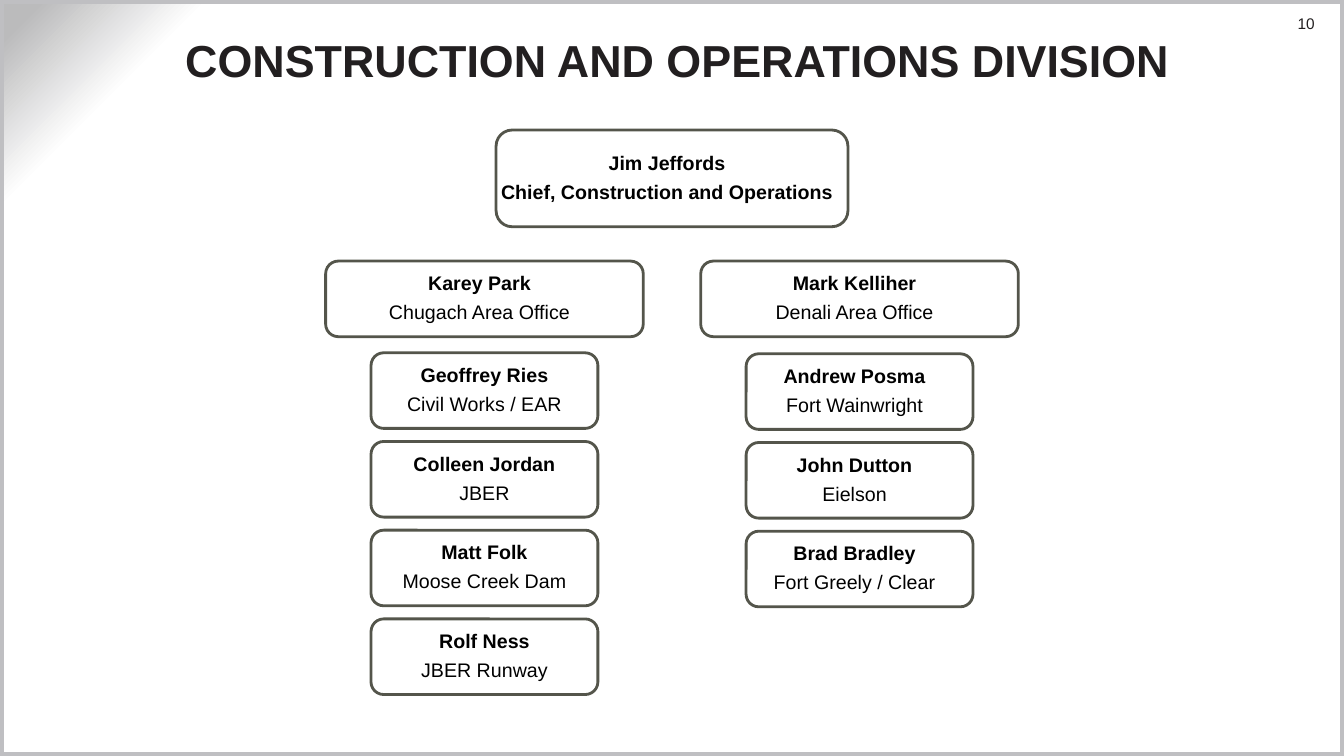
from lxml import etree
from pptx import Presentation
from pptx.dml.color import RGBColor
from pptx.enum.shapes import MSO_SHAPE as Preset
from pptx.enum.text import MSO_ANCHOR as Anchor, PP_ALIGN as Align
from pptx.oxml.ns import qn
from pptx.util import Inches, Pt

WIDTH, HEIGHT = 13.33, 7.5
INK = RGBColor(0x22, 0x1F, 0x20)
BLACK = RGBColor(0, 0, 0)
OLIVE = RGBColor(0x54, 0x55, 0x4B)
FRAME_GREY = RGBColor(0xBF, 0xBF, 0xC2)
WHITE = RGBColor(0xFF, 0xFF, 0xFF)
CORNER_GREY = RGBColor(0xBB, 0xBB, 0xBC)
CORNER_STOPS = [(87, WHITE), (90, WHITE), (98, CORNER_GREY)]

OFFICE_SIZE = (3.15, 0.75)
REPORT_SIZE = (2.25, 0.75)
REPORT_INDENT = 0.45
REPORT_PITCH = 0.88
PADDED = (0, 0.05, 0.1, 0.05)
FLUSH = (0, 0, 0, 0)

CHIEF = ("Jim Jeffords", "Chief, Construction and Operations")
CHUGACH = [
    ("Karey Park", "Chugach Area Office"),
    ("Geoffrey Ries", "Civil Works / EAR"),
    ("Colleen Jordan", "JBER"),
    ("Matt Folk", "Moose Creek Dam"),
    ("Rolf Ness", "JBER Runway"),
]
DENALI = [
    ("Mark Kelliher", "Denali Area Office"),
    ("Andrew Posma", "Fort Wainwright"),
    ("John Dutton", "Eielson"),
    ("Brad Bradley", "Fort Greely / Clear"),
]


def assign(target, values):
    for key, value in values.items():
        setattr(target, key, value)


def set_frame(frame, insets, anchor):
    left, top, right, bottom = map(Inches, insets)
    assign(frame, {
        "word_wrap": True, "vertical_anchor": anchor,
        "margin_left": left, "margin_top": top,
        "margin_right": right, "margin_bottom": bottom,
    })


def write(paragraph, text, size, color, bold, align):
    paragraph.alignment = align
    run = paragraph.add_run()
    run.text = text
    assign(run.font, {"name": "Arial", "size": Pt(size), "bold": bold})
    run.font.color.rgb = color


def outlined(slide, preset, box, color, weight):
    outline = slide.shapes.add_shape(preset, *map(Inches, box))
    outline.shadow.inherit = False
    outline.fill.background()
    outline.line.color.rgb = color
    outline.line.width = Pt(weight)
    return outline


def backdrop(slide):
    slide.background.fill.gradient()
    gradient = slide.element.find(".//" + qn("a:gradFill"))
    for child in list(gradient):
        gradient.remove(child)
    stops = etree.SubElement(gradient, qn("a:gsLst"))
    for position, color in CORNER_STOPS:
        stop = etree.SubElement(stops, qn("a:gs"), pos=str(position * 1000))
        etree.SubElement(stop, qn("a:srgbClr"), val=str(color))
    circle = etree.SubElement(gradient, qn("a:path"), path="circle")
    etree.SubElement(circle, qn("a:fillToRect"), l="100000", t="100000")
    outlined(slide, Preset.RECTANGLE, (0, 0, WIDTH, HEIGHT), FRAME_GREY, 6)


def heading(slide, box, text, size, bold, align, insets, anchor):
    frame = slide.shapes.add_textbox(*map(Inches, box)).text_frame
    set_frame(frame, insets, anchor)
    write(frame.paragraphs[0], text, size, INK, bold, align)


def person_box(slide, box, person, insets=PADDED, bold_role=False):
    card = outlined(slide, Preset.ROUNDED_RECTANGLE, box, OLIVE, 2)
    frame = card.text_frame
    set_frame(frame, insets, Anchor.MIDDLE)
    name, role = person
    lines = [(frame.paragraphs[0], name, True),
             (frame.add_paragraph(), role, bold_role)]
    for paragraph, text, bold in lines:
        assign(paragraph, {"line_spacing": 0.9, "space_after": Pt(5.5)})
        write(paragraph, text, 14, BLACK, bold, Align.CENTER)


def area_column(slide, left, top, first_report, people, insets):
    office, *reports = people
    person_box(slide, (left, top, *OFFICE_SIZE), office)
    for row, report in enumerate(reports):
        report_top = first_report + row * REPORT_PITCH
        box = (left + REPORT_INDENT, report_top, *REPORT_SIZE)
        person_box(slide, box, report, insets)


def org_chart_slide(deck):
    slide = deck.slides.add_slide(deck.slide_layouts[6])
    backdrop(slide)
    heading(slide, (12.44, 0.14, 0.6, 0.19), "10", 11, False,
            Align.RIGHT, (0.1, 0, 0, 0), Anchor.TOP)
    heading(slide, (1.04, 0.14, 11.36, 0.91),
            "CONSTRUCTION AND OPERATIONS DIVISION", 32, True,
            Align.CENTER, (0.05, 0, 0.05, 0), Anchor.MIDDLE)
    person_box(slide, (4.92, 1.29, 3.49, 0.96), CHIEF, bold_role=True)
    area_column(slide, 3.23, 2.59, 3.5, CHUGACH, FLUSH)
    area_column(slide, 6.95, 2.59, 3.51, DENALI, PADDED)


def main():
    deck = Presentation()
    assign(deck, {"slide_width": Inches(WIDTH), "slide_height": Inches(HEIGHT)})
    org_chart_slide(deck)
    deck.save("out.pptx")


if __name__ == "__main__":
    main()
